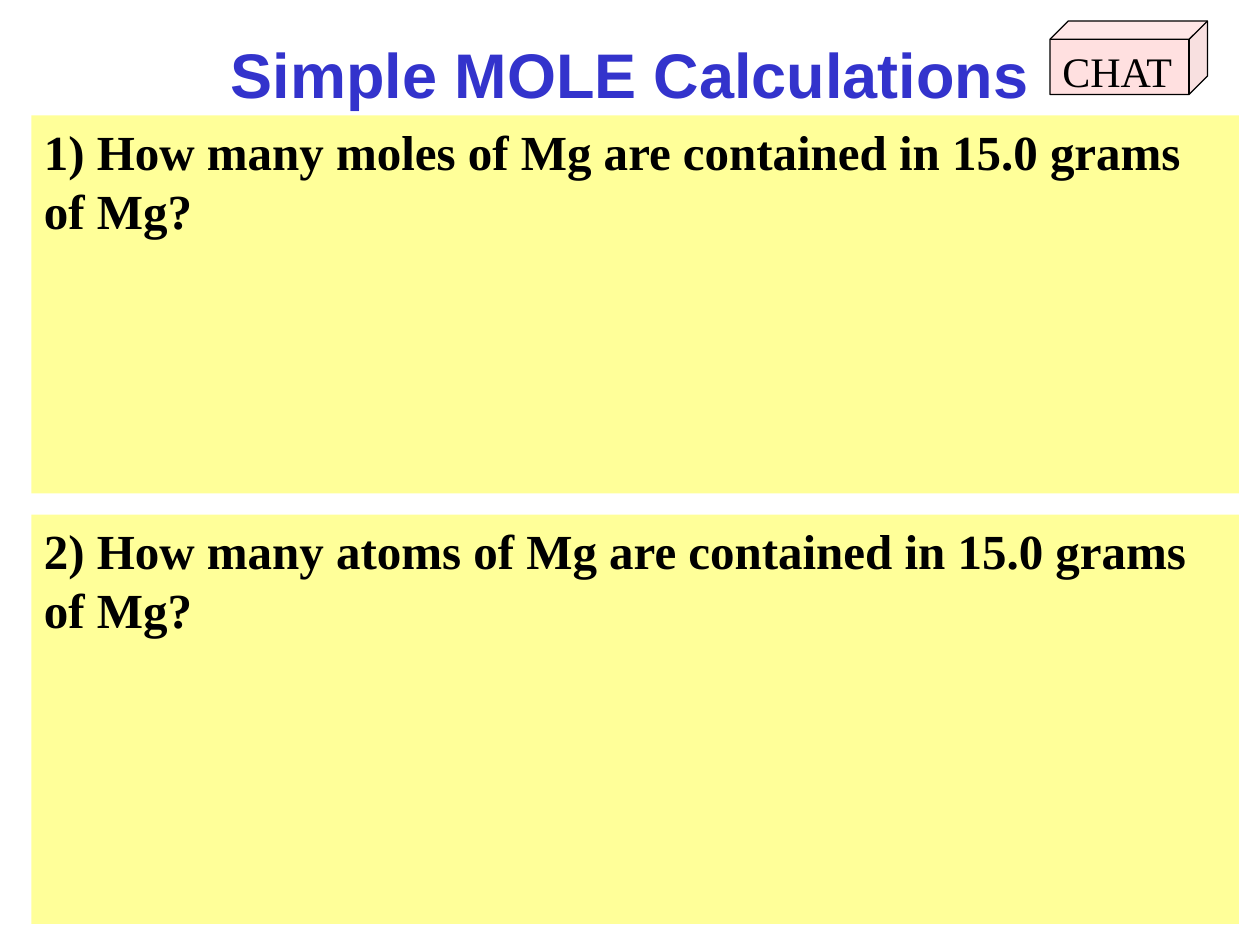
"""Build the worksheet slide on simple mole calculations."""
from dataclasses import dataclass

from lxml import etree
from pptx import Presentation
from pptx.dml.color import RGBColor
from pptx.enum.shapes import MSO_SHAPE
from pptx.enum.text import MSO_ANCHOR, PP_ALIGN
from pptx.oxml.ns import qn
from pptx.util import Inches, Pt

RECTANGLE, CUBE = MSO_SHAPE.RECTANGLE, MSO_SHAPE.CUBE
TOP, MIDDLE = MSO_ANCHOR.TOP, MSO_ANCHOR.MIDDLE
LEFT, CENTER = PP_ALIGN.LEFT, PP_ALIGN.CENTER


@dataclass(frozen=True)
class Theme:
    heading_font: str = "Arial"
    body_font: str = "Times New Roman"
    heading: RGBColor = RGBColor(0x33, 0x33, 0xCC)
    ink: RGBColor = RGBColor(0, 0, 0)
    panel: RGBColor = RGBColor(0xFF, 0xFF, 0x99)
    badge: RGBColor = RGBColor(0xFF, 0, 0)
    badge_opacity: str = "12000"
    heading_size: int = 36
    question_size: int = 28
    badge_size: int = 24


theme = Theme()
COLUMNS, ROWS = 120, 90

deck = Presentation()
deck.slide_width, deck.slide_height = Inches(10), Inches(7.5)
slide = deck.slides.add_slide(deck.slide_layouts[6])


def cells(column, row, across, down):
    width, height = deck.slide_width / COLUMNS, deck.slide_height / ROWS
    return [round(n) for n in (column * width, row * height, across * width, down * height)]


def write(holder, wording, font, size, color, bold=True, align=LEFT, anchor=TOP):
    frame = holder.text_frame
    frame.word_wrap = True
    frame.vertical_anchor = anchor
    paragraph = frame.paragraphs[0]
    paragraph.alignment = align
    run = paragraph.add_run()
    run.text = wording
    run.font.name, run.font.size, run.font.bold = font, Pt(size), bold
    run.font.color.rgb = color
    return paragraph


heading = slide.shapes.add_textbox(*cells(0, 3, COLUMNS, 8))
write(heading, "Simple MOLE Calculations", theme.heading_font, theme.heading_size,
      theme.heading, align=CENTER, anchor=MIDDLE)

questions = [
    (11, 36, "1) How many moles of Mg are contained in 15.0 grams of Mg?"),
    (49, 39, "2) How many atoms of Mg are contained in 15.0 grams of Mg?"),
]
for row, down, wording in questions:
    panel = slide.shapes.add_shape(RECTANGLE, *cells(3, row, 115, down))
    panel.shadow.inherit = False
    panel.fill.solid()
    panel.fill.fore_color.rgb = theme.panel
    panel.line.fill.background()
    question = write(panel, wording, theme.body_font, theme.question_size, theme.ink)
    spacing = etree.SubElement(question._p.get_or_add_pPr(), qn("a:spcBef"))
    etree.SubElement(spacing, qn("a:spcPct"), val="20000")

badge = slide.shapes.add_shape(CUBE, *cells(100, 2, 15, 7))
badge.adjustments[0] = 0.25
badge.shadow.inherit = False
badge.fill.solid()
badge.fill.fore_color.rgb = theme.badge
tint = badge._element.spPr.find(qn("a:solidFill")).find(qn("a:srgbClr"))
etree.SubElement(tint, qn("a:alpha"), val=theme.badge_opacity)
badge.line.color.rgb = theme.ink
badge.line.width = Pt(0.75)
write(badge, "CHAT", theme.body_font, theme.badge_size, theme.ink, bold=False)

deck.save("out.pptx")
